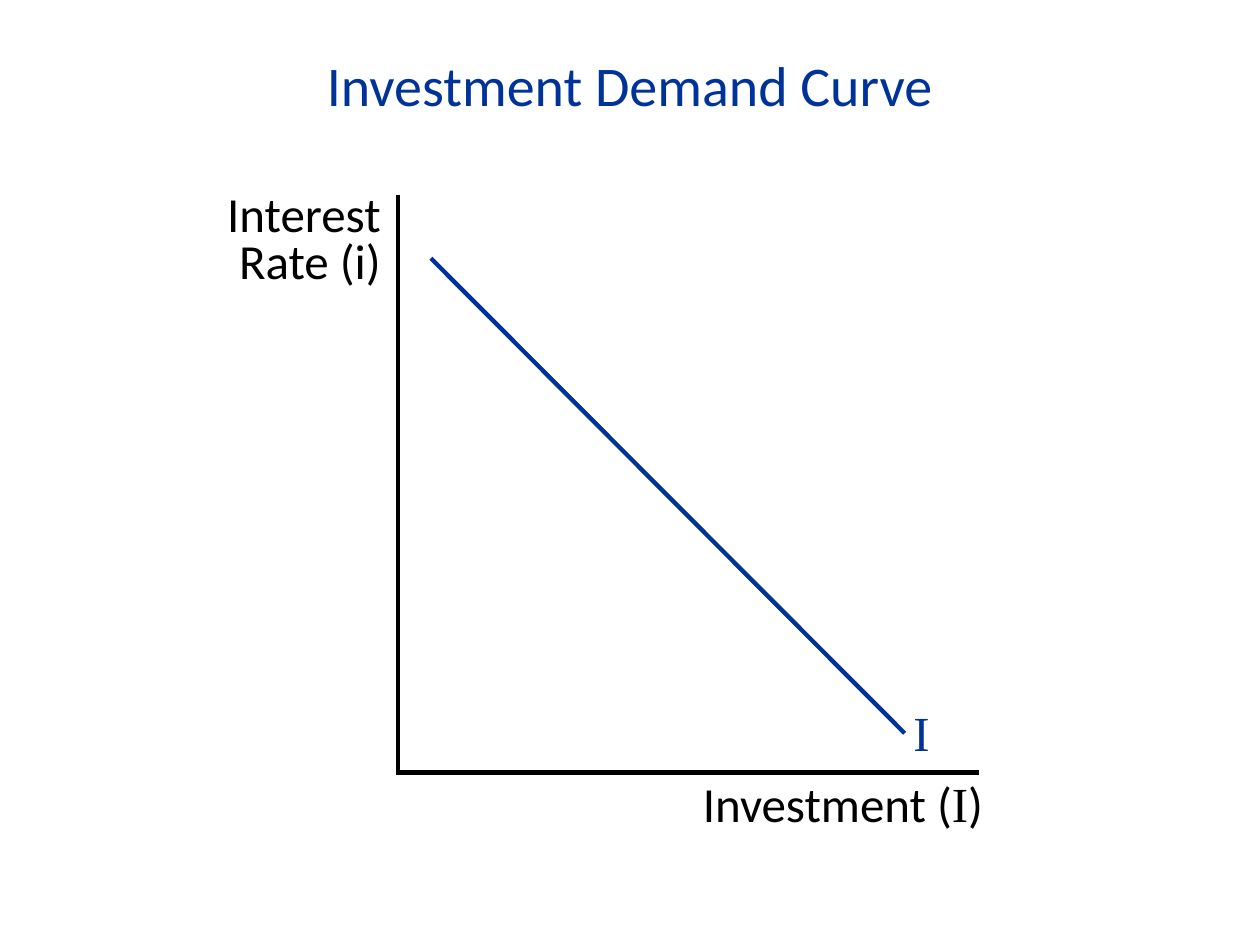
from pptx import Presentation
from pptx import util as u
from pptx.dml.color import RGBColor
from pptx.enum import shapes, text
from pptx.oxml.ns import qn
from lxml import etree

BLUE, BLACK = "003399", "000000"
SANS, SERIF = "Calibri", "Times New Roman"


def colour(hex_value):
    return RGBColor.from_string(hex_value)


def write(frame, lines, size, ink, align=text.PP_ALIGN.LEFT,
          anchor=text.MSO_ANCHOR.TOP, spacing=1.0):
    """Fill a text frame; each line is a list of (words, font) runs."""
    frame_format = {
        "word_wrap": True, "vertical_anchor": anchor,
        "margin_left": u.Inches(0.1), "margin_right": u.Inches(0.1),
        "margin_top": u.Inches(0.05), "margin_bottom": u.Inches(0.05),
    }
    for key, value in frame_format.items():
        setattr(frame, key, value)
    for index, line in enumerate(lines):
        paragraph = frame.add_paragraph() if index else frame.paragraphs[0]
        paragraph.alignment = align
        paragraph.line_spacing = spacing
        paragraph.space_before = u.Pt(0)
        for words, font in line:
            run = paragraph.add_run()
            run.text = words
            for key, value in {"name": font, "size": u.Pt(size), "bold": False}.items():
                setattr(run.font, key, value)
            run.font.color.rgb = colour(ink)


def add_label(slide, box, lines, ink, **layout):
    label = slide.shapes.add_textbox(*map(u.Inches, box))
    write(label.text_frame, lines, 28, ink, **layout)


def add_line(slide, start, end, ink):
    line = slide.shapes.add_connector(
        shapes.MSO_CONNECTOR.STRAIGHT, *map(u.Inches, (*start, *end)))
    line.line.color.rgb = colour(ink)
    line.line.width = u.Pt(2.5)
    # An empty effect list removes the theme shadow
    etree.SubElement(line._element.spPr, qn("a:effectLst"))


def add_title(slide, box):
    title = slide.shapes.title
    for key, value in zip(("left", "top", "width", "height"), box):
        setattr(title, key, u.Inches(value))
    write(title.text_frame, [[("Investment Demand Curve", SANS)]], 32, BLUE,
          align=text.PP_ALIGN.CENTER, anchor=text.MSO_ANCHOR.MIDDLE)


def add_demand_graph(slide, box):
    left, top, width, height = box
    right, bottom = left + width, top + height

    # Axes
    add_line(slide, (left, top), (left, bottom + 0.02), BLACK)
    add_line(slide, (left, bottom), (right, bottom), BLACK)

    # Axis labels
    add_label(slide, (left - 1.54, top - 0.05, 1.5, 0.86),
              [[("Interest", SANS)], [("Rate (i)", SANS)]], BLACK,
              align=text.PP_ALIGN.RIGHT, spacing=0.8)
    add_label(slide, (right - 2.29, bottom - 0.04, 2.5, 0.57),
              [[("Investment (", SANS), ("I", SERIF), (")", SANS)]], BLACK)

    # Demand curve and its label
    add_line(slide, (left + 0.26, top + 0.5), (right - 0.59, bottom - 0.31), BLUE)
    add_label(slide, (right - 0.62, bottom - 0.6, 0.59, 0.57),
              [[("I", SERIF)]], BLUE)


def main():
    deck = Presentation()
    deck.slide_width, deck.slide_height = u.Inches(10), u.Inches(7.5)
    slide = deck.slides.add_slide(deck.slide_layouts.get_by_name("Title Only"))
    slide.background.fill.solid()
    slide.background.fill.fore_color.rgb = colour("FFFFFF")
    add_title(slide, (0.7, 0.35, 8.6, 0.64))
    add_demand_graph(slide, (3.16, 1.55, 4.61, 4.58))
    deck.save("out.pptx")


if __name__ == "__main__":
    main()
